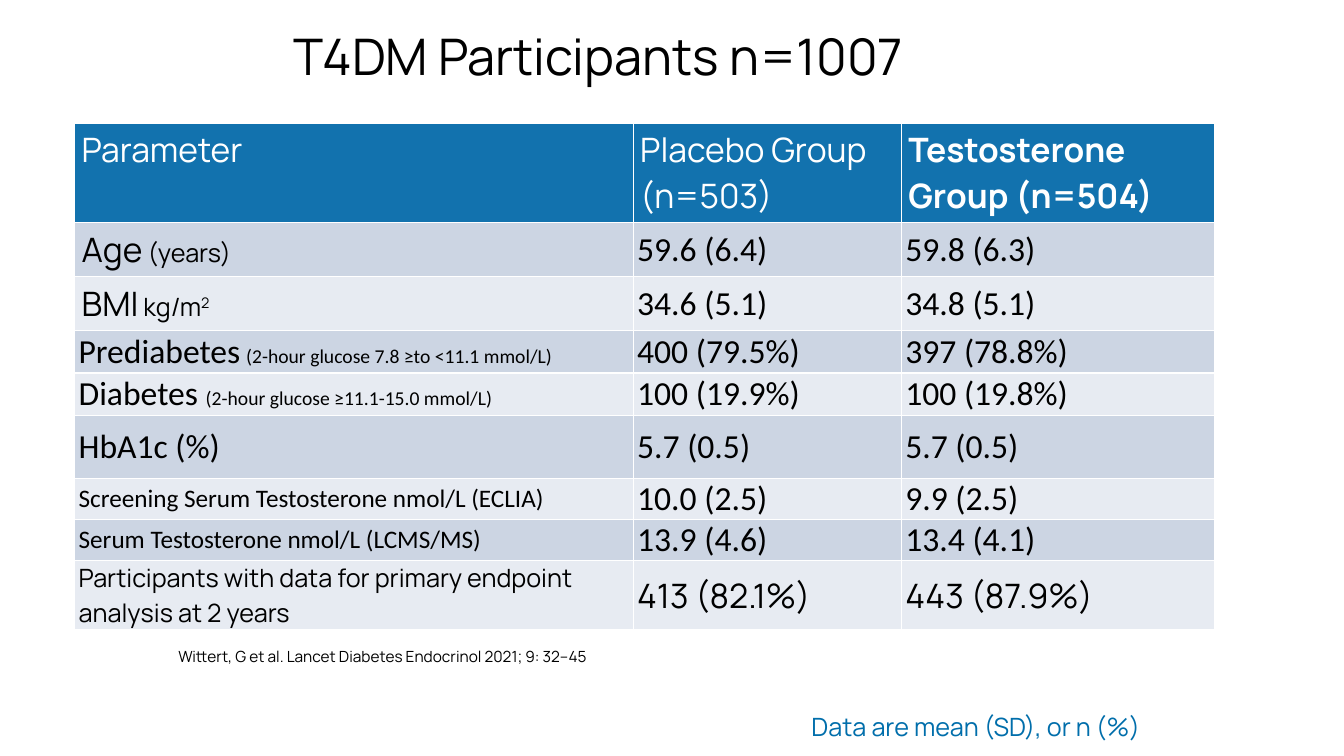
from pptx import Presentation
from pptx import util as u
from pptx.dml.color import RGBColor
from pptx.enum import text as t

SLIDE_W, SLIDE_H = 13.33, 7.5
COLORS = {"header": "1272AE", "band": "CCD5E3", "plain": "E7EBF2",
          "black": "000000", "white": "FFFFFF", "note": "006EAB"}
SANS, BODY = "Manrope", "Calibri"

COLUMN_WIDTHS = [5.54, 2.66, 3.11]
ROW_HEIGHTS = [0.72, 0.41, 0.41, 0.42, 0.42, 0.63, 0.31, 0.31, 0.63]
ROOMY, TIGHT = (0.07, 0.04), (0.04, 0)  # side and top/bottom cell margins

HEADINGS = [("Parameter", False), ("Placebo Group (n=503)", False),
            ("Testosterone Group (n=504)", True)]

# Label runs (wording, size), label font, label margins, value font, values
PARAMETERS = [
    ([("Age", 24), (" (years)", 18)], SANS, ROOMY, BODY,
     ["59.6 (6.4)", "59.8 (6.3)"]),
    ([("BMI", 24), (" kg/m", 18), ("2", 18, 30)], SANS, ROOMY, BODY,
     ["34.6 (5.1)", "34.8 (5.1)"]),
    ([("Prediabetes", 24), (" ", 18),
      ("(2-hour glucose 7.8 ≥to <11.1 mmol/L)", 14)], BODY, TIGHT, BODY,
     ["400 (79.5%)", "397 (78.8%)"]),
    ([("Diabetes ", 24), ("(2-hour glucose ≥11.1-15.0 mmol/L)", 14)],
     BODY, TIGHT, BODY, ["100 (19.9%)", "100 (19.8%)"]),
    ([("HbA1c (%)", 24)], BODY, TIGHT, BODY, ["5.7 (0.5)", "5.7 (0.5)"]),
    ([("Screening Serum Testosterone nmol/L (ECLIA)", 18)], BODY, TIGHT, BODY,
     ["10.0 (2.5)", "9.9 (2.5)"]),
    ([("Serum Testosterone nmol/L (LCMS/MS)", 18)], BODY, TIGHT, BODY,
     ["13.9 (4.6)", "13.4 (4.1)"]),
    ([("Participants with data for primary endpoint analysis at 2 years", 18)],
     SANS, TIGHT, SANS, ["413 (82.1%)", "443 (87.9%)"]),
]


def apply(target, formats):
    for name, value in formats.items():
        setattr(target, name, value)


def share(left, top, width, height):
    """Turn shares of the slide into lengths."""
    return [u.Inches(round(part * whole, 2)) for part, whole in
            zip((left, top, width, height), (SLIDE_W, SLIDE_H) * 2)]


def add_run(paragraph, wording, size, font, color, bold=False, raised=0):
    run = paragraph.add_run()
    run.text = wording
    apply(run.font, {"name": font, "size": u.Pt(size), "bold": bold})
    run.font.color.rgb = RGBColor.from_string(COLORS[color])
    if raised:
        run._r.get_or_add_rPr().set("baseline", str(raised * 1000))


def fill_cell(cell, runs, font, color, fill, margins, anchor, bold=False):
    side, end = (u.Inches(m) for m in margins)
    apply(cell, {"margin_left": side, "margin_right": side, "margin_top": end,
                 "margin_bottom": end, "vertical_anchor": anchor})
    cell.fill.solid()
    cell.fill.fore_color.rgb = RGBColor.from_string(COLORS[fill])
    for wording, size, *raised in runs:
        add_run(cell.text_frame.paragraphs[0], wording, size, font, color,
                bold, *raised)


def add_title(slide, wording, place):
    title = slide.shapes.title
    apply(title, dict(zip(("left", "top", "width", "height"), place)))
    apply(title.text_frame, {"vertical_anchor": t.MSO_ANCHOR.MIDDLE,
                             "word_wrap": True,
                             "auto_size": t.MSO_AUTO_SIZE.NONE})
    paragraph = title.text_frame.paragraphs[0]
    apply(paragraph, {"alignment": t.PP_ALIGN.LEFT, "line_spacing": 0.9})
    add_run(paragraph, wording, 36, SANS, "black")


def add_note(slide, wording, place, size, color, wrap):
    frame = slide.shapes.add_textbox(*place).text_frame
    apply(frame, {"word_wrap": wrap,
                  "auto_size": t.MSO_AUTO_SIZE.SHAPE_TO_FIT_TEXT})
    add_run(frame.paragraphs[0], wording, size, SANS, color)


def add_participants_table(slide, place):
    table = slide.shapes.add_table(len(ROW_HEIGHTS), len(COLUMN_WIDTHS),
                                   *place).table
    for column, width in zip(table.columns, COLUMN_WIDTHS):
        column.width = u.Inches(width)
    for row, height in zip(table.rows, ROW_HEIGHTS):
        row.height = u.Inches(height)

    # Group headings
    for col, (heading, bold) in enumerate(HEADINGS):
        fill_cell(table.cell(0, col), [(heading, 24)], SANS, "white", "header",
                  ROOMY, t.MSO_ANCHOR.TOP, bold)

    # Parameters with alternating fills
    middle = t.MSO_ANCHOR.MIDDLE
    for row, (label, font, margins, value_font, values) in enumerate(PARAMETERS, 1):
        fill = "band" if row % 2 else "plain"
        fill_cell(table.cell(row, 0), label, font, "black", fill, margins, middle)
        for col, value in enumerate(values, 1):
            fill_cell(table.cell(row, col), [(value, 24)], value_font, "black",
                      fill, TIGHT, middle)


def main():
    deck = Presentation()
    apply(deck, {"slide_width": u.Inches(SLIDE_W),
                 "slide_height": u.Inches(SLIDE_H)})
    slide = deck.slides.add_slide(deck.slide_layouts.get_by_name("Title Only"))

    add_participants_table(slide, share(0.0555, 0.163, 0.8485, 0.629))
    add_title(slide, "T4DM Participants n=1007", share(0.211, 0.012, 0.529, 0.132))

    # Unit note and citation
    add_note(slide, "Data are mean (SD), or n (%)",
             share(0.5965, 0.935, 0.286, 0.053), 18, "note", False)
    add_note(slide, "Wittert, G et al. Lancet Diabetes Endocrinol 2021; 9: 32–45",
             share(0.1255, 0.849, 0.803, 0.039), 11, "black", True)

    deck.save("out.pptx")


if __name__ == "__main__":
    main()
